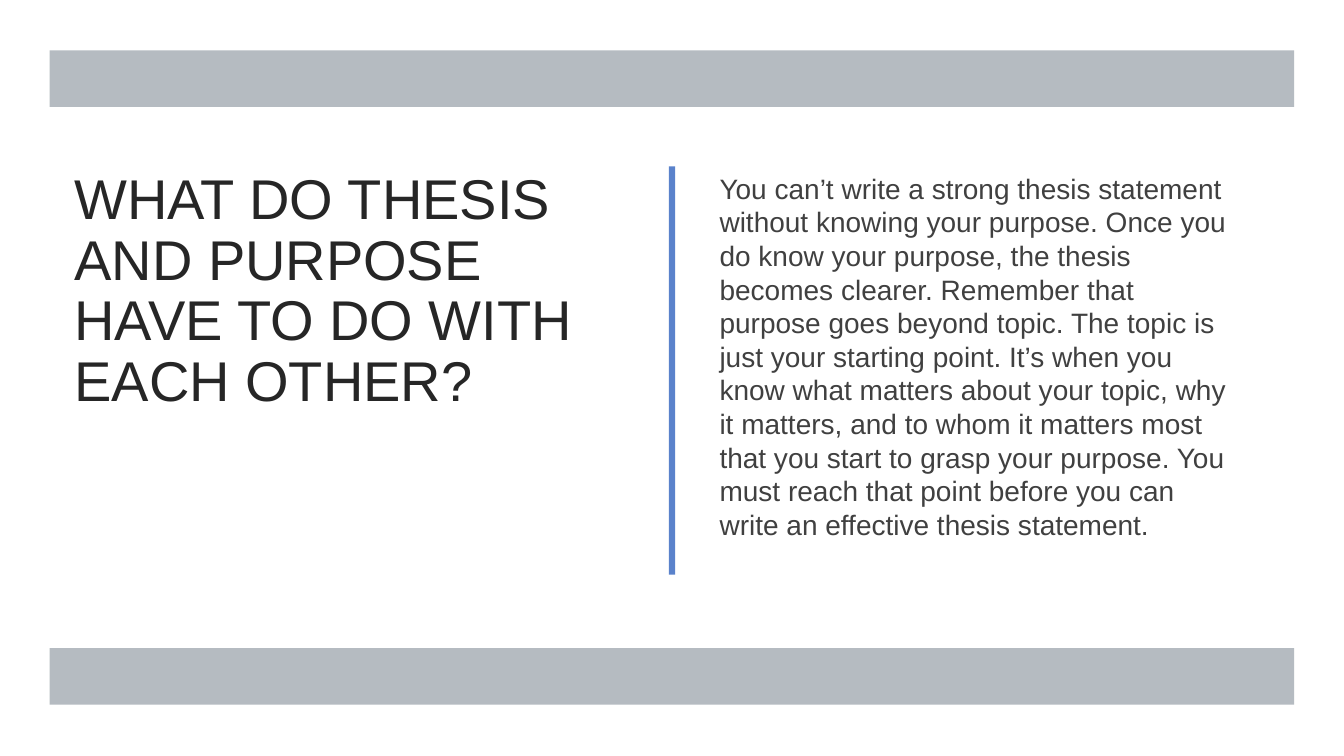
from lxml.etree import SubElement
from pptx import Presentation
from pptx.dml.color import RGBColor
from pptx.enum.shapes import MSO_SHAPE
from pptx.enum.text import MSO_ANCHOR, MSO_AUTO_SIZE, PP_ALIGN
from pptx.oxml.ns import qn
from pptx.util import Pt

TITLE = "WHAT DO THESIS AND PURPOSE HAVE TO DO WITH EACH OTHER?"
BODY = (
    "You can’t write a strong thesis statement without knowing your purpose. "
    "Once you do know your purpose, the thesis becomes clearer. "
    "Remember that purpose goes beyond topic. The topic is just your starting point. "
    "It’s when you know what matters about your topic, why it matters, and to whom "
    "it matters most that you start to grasp your purpose. "
    "You must reach that point before you can write an effective thesis statement."
)

FONT = "Arial"
TITLE_COLOR = RGBColor(0x26, 0x26, 0x26)
BODY_COLOR = RGBColor(0x40, 0x40, 0x40)
BAND_COLOR = RGBColor(0x96, 0x9F, 0xA7)
DIVIDER_COLOR = RGBColor(0x5A, 0x82, 0xCB)

SLIDE_WIDTH, SLIDE_HEIGHT = 960, 540
MARGIN = 35.5
BAND_HEIGHT = 40.3
BAND_TOPS = (36, 463)
TEXT_TOP, TEXT_HEIGHT = 118.8, 307.4
TITLE_LEFT, TITLE_WIDTH = 46.1, 403.2
BODY_LEFT, BODY_WIDTH = 506.9, 379.4
DIVIDER_WIDTH, DIVIDER_HEIGHT = 4.5, 291.6


def add_bar(slide, left, top, width, height, color, opacity=100):
    shape = slide.shapes.add_shape(
        MSO_SHAPE.RECTANGLE, Pt(left), Pt(top), Pt(width), Pt(height)
    )
    shape.shadow.inherit = False
    shape.line.fill.background()
    shape.fill.solid()
    shape.fill.fore_color.rgb = color
    if opacity < 100:
        color_element = shape.fill._xPr.find(qn("a:solidFill"))[0]
        SubElement(color_element, qn("a:alpha"), val=str(opacity * 1000))


def fill_text(shape, left, width, text, size, color, line_spacing):
    shape.left, shape.top = Pt(left), Pt(TEXT_TOP)
    shape.width, shape.height = Pt(width), Pt(TEXT_HEIGHT)
    frame = shape.text_frame
    frame.text = text
    frame.word_wrap = True
    frame.auto_size = MSO_AUTO_SIZE.NONE
    frame.vertical_anchor = MSO_ANCHOR.TOP
    paragraph = frame.paragraphs[0]
    paragraph.alignment = PP_ALIGN.LEFT
    paragraph.line_spacing = line_spacing
    paragraph.font.name = FONT
    paragraph.font.size = Pt(size)
    paragraph.font.color.rgb = color


def main():
    presentation = Presentation()
    presentation.slide_width = Pt(SLIDE_WIDTH)
    presentation.slide_height = Pt(SLIDE_HEIGHT)
    slide = presentation.slides.add_slide(presentation.slide_layouts[5])

    fill_text(slide.shapes.title, TITLE_LEFT, TITLE_WIDTH, TITLE, 40, TITLE_COLOR, 0.9)
    body = slide.shapes.add_textbox(0, 0, 0, 0)
    fill_text(body, BODY_LEFT, BODY_WIDTH, BODY, 20, BODY_COLOR, 1.0)

    for top in BAND_TOPS:
        add_bar(slide, MARGIN, top, SLIDE_WIDTH - 2 * MARGIN, BAND_HEIGHT, BAND_COLOR, 70)
    add_bar(
        slide, (SLIDE_WIDTH - DIVIDER_WIDTH) / 2, TEXT_TOP,
        DIVIDER_WIDTH, DIVIDER_HEIGHT, DIVIDER_COLOR,
    )
    presentation.save("out.pptx")


if __name__ == "__main__":
    main()
